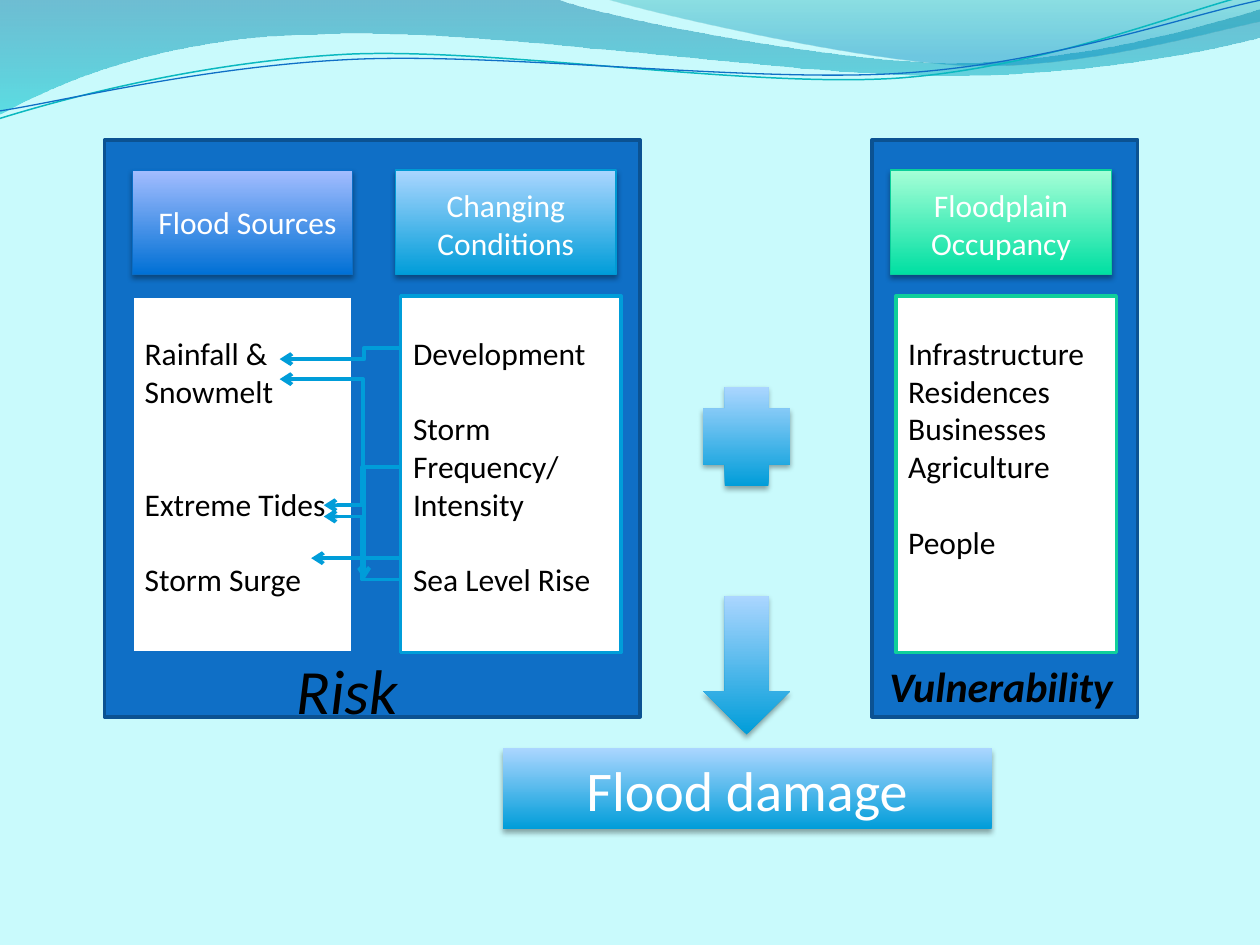
from lxml import etree
from pptx import Presentation
from pptx import util as u
from pptx.dml.color import RGBColor
from pptx.enum import shapes, text
from pptx.oxml import ns

SKY = RGBColor(0xC9, 0xFA, 0xFC)
BLUE = RGBColor(0x0F, 0x6F, 0xC6)
NAVY = RGBColor(0x0B, 0x52, 0x92)
CYAN = RGBColor(0x00, 0x9D, 0xD9)
GREEN = RGBColor(0x10, 0xCF, 0x9B)
TEAL = RGBColor(0x0A, 0xB8, 0xBF)
BLUE_EDGE = RGBColor(0x0A, 0x6D, 0xC6)
CYAN_EDGE = RGBColor(0x00, 0x9A, 0xD4)
GREEN_EDGE = RGBColor(0x0B, 0xCF, 0x9A)
WHITE = RGBColor(0xFF, 0xFF, 0xFF)
BLACK = RGBColor(0, 0, 0)

BLUE_FADE = [(0, RGBColor(0x00, 0x70, 0xD5), 100), (100, RGBColor(0xA3, 0xBD, 0xFF), 100)]
CYAN_FADE = [(0, CYAN, 100), (100, RGBColor(0xAB, 0xD6, 0xFF), 100)]
GREEN_FADE = [(0, RGBColor(0x00, 0xDF, 0xA2), 100), (100, RGBColor(0xA6, 0xFF, 0xD7), 100)]
WAVE_LEFT = [(0, RGBColor(0x00, 0x74, 0xA1), 45), (100, RGBColor(0x00, 0xC6, 0xCF), 55)]
WAVE_RIGHT = [(0, RGBColor(0x00, 0xA1, 0xA9), 30), (80, RGBColor(0x00, 0x8B, 0xBF), 45)]

WAVES = [
    ((0, -0.01), [(4.41, -0.01), (4.76, 0.13, 6.64, 0.5, 7.59, 0.5),
                  (8.54, 0.5, 9.59, 0.2, 10.01, 0.07), (10.02, 0.29),
                  (9.84, 0.35, 8.7, 0.61, 7.46, 0.6), (6.22, 0.6, 3.82, 0.22, 2.58, 0.27),
                  (1.29, 0.28, 0.46, 0.66, -0.01, 0.91)], WAVE_LEFT, None),
    ((4.8, -0.01), [(5.1, 0.09, 6.82, 0.49, 7.69, 0.52), (8.56, 0.55, 9.62, 0.25, 10.01, 0.17),
                    (10.01, 0)], WAVE_RIGHT, None),
    ((0, 0.94), [(0.48, 0.79, 1.58, 0.49, 2.77, 0.43), (3.96, 0.38, 5.93, 0.7, 7.13, 0.62),
                 (8.33, 0.53, 9.39, 0.08, 9.99, -0.06)], None, (TEAL, 0.85)),
    ((0, 0.88), [(0.47, 0.81, 1.64, 0.52, 2.83, 0.47), (4.03, 0.42, 5.98, 0.66, 7.17, 0.58),
                 (8.37, 0.5, 9.42, 0.12, 10.01, 0)], None, (BLUE, 0.75)),
]

PANELS = [(0.83, 4.25), (6.92, 2.11)]
COLUMNS = [
    dict(title="Flood Sources", head=1.05, label=(1.05, 1.56, 1.83, 0.4), left=1.05,
         fade=BLUE_FADE, edge=BLUE_EDGE, border=BLUE, height=2.22,
         items=[("Rainfall &", 0), ("Snowmelt", 0), ("Extreme Tides", 2), ("Storm Surge", 1)]),
    dict(title="Changing Conditions", head=3.14, label=(3.1, 1.43, 1.83, 0.71), left=3.18,
         fade=CYAN_FADE, edge=CYAN_EDGE, border=CYAN, height=2.22,
         items=[("Development", 0), ("Storm Frequency/ Intensity", 1), ("Sea Level Rise", 1)]),
    dict(title="Floodplain Occupancy", head=7.07, label=(7.03, 1.43, 1.83, 0.71), left=7.11,
         fade=GREEN_FADE, edge=GREEN_EDGE, border=GREEN, height=1.92,
         items=[("Infrastructure", 0), ("Residences", 0), ("Businesses", 0),
                ("Agriculture", 0), ("People", 1)]),
]
LINKS = [
    (2.76, (2.22, 2.85), "bentConnector3", 0.3),
    (3.71, (2.22, 3.01), "bentConnector3", 0.31),
    (3.71, (2.57, 4.01), "bentConnector3", 0.5),
    (4.43, (2.47, 4.43), "line", None),
    (4.6, (2.57, 4.1), "bentConnector3", 0.5),
    (3.71, (2.89, 4.6), "bentConnector2", None),
]
LINK_START = 3.18
LINE_HEIGHT = 21.5

deck = Presentation()
deck.slide_width, deck.slide_height = u.Inches(10), u.Inches(7.5)
page = deck.slides.add_slide(deck.slide_layouts[6])
page.background.fill.solid()
page.background.fill.fore_color.rgb = SKY


def add(parent, tag, **attributes):
    child = etree.SubElement(parent, ns.qn(tag))
    for key, value in attributes.items():
        child.set(key, str(value))
    return child


def add_color(parent, color, opacity):
    swatch = add(parent, "a:srgbClr", val=color)
    if opacity < 100:
        add(swatch, "a:alpha", val=opacity * 1000)


def paint(shape, fill=None, line=None, angle=270, shadow=False):
    shape.shadow.inherit = False
    properties = shape._element.spPr
    if isinstance(fill, RGBColor):
        shape.fill.solid()
        shape.fill.fore_color.rgb = fill
    else:
        shape.fill.background()
    if line:
        shape.line.color.rgb, shape.line.width = line[0], u.Pt(line[1])
    else:
        shape.line.fill.background()
    if isinstance(fill, list):
        gradient = etree.Element(ns.qn("a:gradFill"), rotWithShape="1")
        stops = add(gradient, "a:gsLst")
        for position, color, opacity in fill:
            add_color(add(stops, "a:gs", pos=position * 1000), color, opacity)
        add(gradient, "a:lin", ang=angle * 60000, scaled=0)
        properties.replace(properties.find(ns.qn("a:noFill")), gradient)
    if shadow:
        cast = add(properties.find(ns.qn("a:effectLst")), "a:outerShdw", blurRad=u.Pt(3.1),
                   dist=u.Pt(1.8), dir=90 * 60000, rotWithShape=0)
        add_color(cast, BLACK, 35)


def add_block(kind, place, **style):
    block = page.shapes.add_shape(kind, *map(u.Inches, place))
    paint(block, **style)
    return block


def write(box, items, size=18, color=BLACK, align=text.PP_ALIGN.LEFT, wrap=True, **extra):
    frame = box.text_frame
    frame.word_wrap = wrap
    frame.auto_size = text.MSO_AUTO_SIZE.SHAPE_TO_FIT_TEXT
    for index, (words, skipped) in enumerate(items):
        para = frame.add_paragraph() if index else frame.paragraphs[0]
        para.alignment = align
        if skipped:
            para.space_before = u.Pt(skipped * LINE_HEIGHT)
        span = para.add_run()
        span.text = words
        span.font.color.rgb = color
        for key, value in dict(name="Calibri", size=u.Pt(size), **extra).items():
            setattr(span.font, key, value)


def add_text(place, items, **style):
    write(page.shapes.add_textbox(*map(u.Inches, place)), items, **style)


def add_wave(start, steps, fill, line):
    points = [(u.Inches(x), u.Inches(y))
              for step in steps for x, y in zip(step[::2], step[1::2])]
    builder = page.shapes.build_freeform(*map(u.Inches, start))
    builder.add_line_segments(points, close=fill is not None)
    wave = builder.convert_to_shape()
    segments = iter(list(wave._element.spPr.iter(ns.qn("a:lnTo"))))
    for step in steps:
        group = [next(segments) for _ in step[::2]]
        if len(group) == 3:
            curve = etree.Element(ns.qn("a:cubicBezTo"))
            group[0].addprevious(curve)
            for segment in group:
                curve.append(segment[0])
                segment.getparent().remove(segment)
    paint(wave, fill, line, angle=90)


def add_link(start_y, end, preset, bend):
    kind = shapes.MSO_CONNECTOR.STRAIGHT if preset == "line" else shapes.MSO_CONNECTOR.ELBOW
    link = page.shapes.add_connector(kind, *map(u.Inches, (LINK_START, start_y, *end)))
    link.line.color.rgb, link.line.width = CYAN, u.Pt(2.25)
    add(link.line._get_or_add_ln(), "a:tailEnd", type="arrow")
    properties = link._element.spPr
    add(properties, "a:effectLst")
    geometry = properties.find(ns.qn("a:prstGeom"))
    geometry.set("prst", preset)
    if bend:
        guides = geometry.find(ns.qn("a:avLst"))
        if guides is None:
            guides = add(geometry, "a:avLst")
        add(guides, "a:gd", name="adj1", fmla=f"val {round(bend * 100000)}")


RECT = shapes.MSO_SHAPE.RECTANGLE
CENTER = text.PP_ALIGN.CENTER

for wave in WAVES:
    add_wave(*wave)

for left, width in PANELS:
    add_block(RECT, (left, 1.11, width, 4.58), fill=BLUE, line=(NAVY, 2))

for column in COLUMNS:
    add_block(RECT, (column["head"], 1.35, 1.75, 0.83), fill=column["fade"],
              line=(column["edge"], 0.75), shadow=True)
    add_text(column["label"], [(column["title"], 0)], color=WHITE, align=CENTER)
    add_block(RECT, (column["left"], 2.35, 1.75, 2.83), fill=WHITE, line=(column["border"], 2))
    add_text((column["left"], 2.6, 1.83, column["height"]), column["items"])

for link in LINKS:
    add_link(*link)

damage = add_block(RECT, (3.99, 5.94, 3.88, 0.64), fill=CYAN_FADE, shadow=True)
write(damage, [("Flood damage", 0)], size=32, color=WHITE, align=CENTER)
add_block(shapes.MSO_SHAPE.DOWN_ARROW, (5.58, 4.73, 0.69, 1.1), fill=CYAN_FADE, shadow=True)
add_block(shapes.MSO_SHAPE.CROSS, (5.58, 3.07, 0.69, 0.79), fill=CYAN_FADE, shadow=True)
add_text((6.95, 5.19, 1.99, 0.5), [("Vulnerability", 0)], size=24, align=CENTER, wrap=False,
         bold=True, italic=True)
add_text((2.25, 5.12, 1.08, 0.71), [("Risk", 0)], size=36, italic=True)

deck.save("out.pptx")
